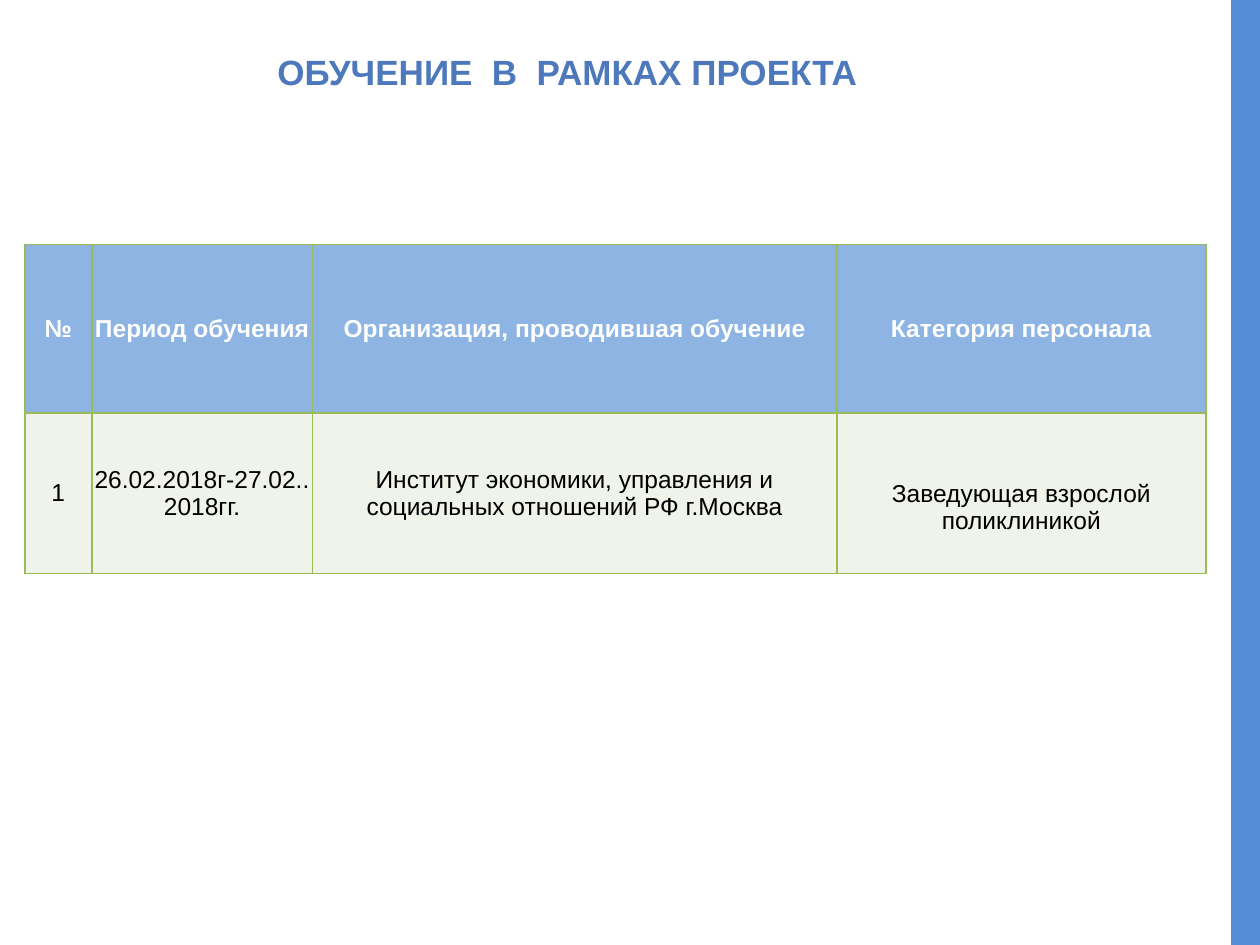
from dataclasses import dataclass

from lxml.etree import SubElement
from pptx import Presentation
from pptx.dml.color import RGBColor
from pptx.enum.shapes import MSO_SHAPE
from pptx.enum.text import MSO_ANCHOR, MSO_AUTO_SIZE, PP_ALIGN
from pptx.oxml.ns import qn
from pptx.util import Cm, Pt


@dataclass(frozen=True)
class Theme:
    font: str = "Arial"
    title_size: int = 20
    table_size: int = 14
    title: str = "4D79BC"
    bar: str = "558ED5"
    header_fill: str = "8EB4E3"
    header_text: str = "FFFFFF"
    body_fill: str = "EFF3E9"
    body_text: str = "000000"
    border: str = "9BBB59"


THEME = Theme()
SLIDE_WIDTH, SLIDE_HEIGHT = Cm(25.4), Cm(19.05)
COLUMN_WIDTHS = [1.35, 4.45, 10.57, 7.44]
ROW_HEIGHTS = [3.4, 3.23]
TRAINING = [
    ["№", "Период обучения", "Организация, проводившая обучение", "Категория персонала"],
    [
        "1",
        "26.02.2018г-27.02..2018гг.",
        "Институт экономики, управления и социальных отношений РФ г.Москва",
        "Заведующая взрослой поликлиникой",
    ],
]


def add_run(paragraph, text, size, color, bold):
    run = paragraph.add_run()
    run.text = text
    run.font.name = THEME.font
    run.font.size = Pt(size)
    run.font.bold = bold
    run.font.color.rgb = RGBColor.from_string(color)


def add_title(slide, text):
    title = slide.shapes.title
    title.left, title.top, title.width, title.height = Cm(5.46), Cm(0.89), Cm(18.85), Cm(1.12)
    frame = title.text_frame
    frame.word_wrap = True
    frame.auto_size = MSO_AUTO_SIZE.SHAPE_TO_FIT_TEXT
    frame.vertical_anchor = MSO_ANCHOR.TOP
    frame.margin_left = frame.margin_right = frame.margin_top = frame.margin_bottom = Cm(0.13)
    paragraph = frame.paragraphs[0]
    paragraph.alignment = PP_ALIGN.LEFT
    add_run(paragraph, text, THEME.title_size, THEME.title, True)


def add_side_bar(slide):
    width = Cm(0.58)
    bar = slide.shapes.add_shape(
        MSO_SHAPE.RECTANGLE, SLIDE_WIDTH - width, 0, width, SLIDE_HEIGHT
    )
    bar.shadow.inherit = False
    bar.fill.solid()
    bar.fill.fore_color.rgb = RGBColor.from_string(THEME.bar)
    bar.line.fill.background()


def add_borders(cell):
    """Draw all four edges; call before filling, as the schema puts lines first."""
    properties = cell._tc.get_or_add_tcPr()
    for edge in ("a:lnL", "a:lnR", "a:lnT", "a:lnB"):
        line = SubElement(properties, qn(edge), w=str(Pt(1)))
        fill = SubElement(line, qn("a:solidFill"))
        SubElement(fill, qn("a:srgbClr"), val=THEME.border)


def format_cell(cell, text, is_header):
    add_borders(cell)
    cell.fill.solid()
    cell.fill.fore_color.rgb = RGBColor.from_string(
        THEME.header_fill if is_header else THEME.body_fill
    )
    cell.margin_left = cell.margin_right = cell.margin_top = cell.margin_bottom = 0
    cell.vertical_anchor = MSO_ANCHOR.MIDDLE
    paragraph = cell.text_frame.paragraphs[0]
    paragraph.alignment = PP_ALIGN.CENTER
    color = THEME.header_text if is_header else THEME.body_text
    add_run(paragraph, text, THEME.table_size, color, is_header)


def add_training_table(slide):
    table = slide.shapes.add_table(
        len(ROW_HEIGHTS), len(COLUMN_WIDTHS), Cm(0.5), Cm(4.93),
        Cm(sum(COLUMN_WIDTHS)), Cm(sum(ROW_HEIGHTS)),
    ).table
    for column, width in zip(table.columns, COLUMN_WIDTHS):
        column.width = Cm(width)
    for row_index, (row, height) in enumerate(zip(table.rows, ROW_HEIGHTS)):
        row.height = Cm(height)
        for cell, text in zip(row.cells, TRAINING[row_index]):
            format_cell(cell, text, is_header=row_index == 0)
    # The staff category sits half a line below the middle of its row.
    table.cell(1, 3).margin_top = Cm(0.57)


def main():
    presentation = Presentation()
    presentation.slide_width, presentation.slide_height = SLIDE_WIDTH, SLIDE_HEIGHT
    slide = presentation.slides.add_slide(presentation.slide_layouts.get_by_name("Title Only"))
    add_training_table(slide)
    add_title(slide, "ОБУЧЕНИЕ  В  РАМКАХ ПРОЕКТА")
    add_side_bar(slide)
    presentation.save("out.pptx")


if __name__ == "__main__":
    main()
